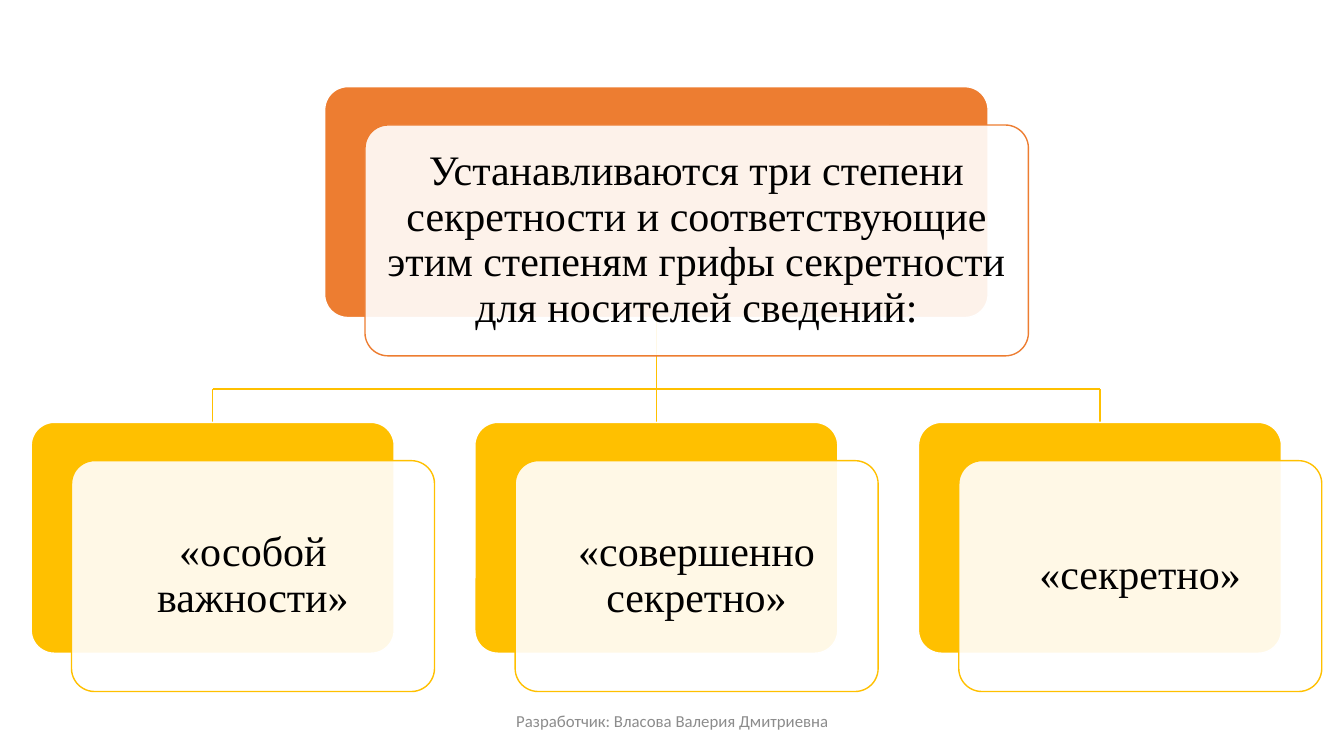
"""Build a slide with a tree diagram of the three degrees of secrecy."""
from pptx import Presentation
from pptx.dml.color import RGBColor
from pptx.enum.shapes import MSO_CONNECTOR, MSO_SHAPE
from pptx.enum.text import MSO_ANCHOR, MSO_AUTO_SIZE, PP_ALIGN
from pptx.oxml.ns import qn
from pptx.util import Inches, Pt
from lxml.etree import SubElement


def rgb(value):
    return RGBColor.from_string(value)


def write(sp, text, size, font, color, inset, spacing):
    tf = sp.text_frame
    tf.word_wrap = True
    tf.auto_size = MSO_AUTO_SIZE.NONE
    tf.vertical_anchor = MSO_ANCHOR.MIDDLE
    tf.margin_left = tf.margin_right = Inches(inset)
    tf.margin_top = tf.margin_bottom = Inches(inset)
    p = tf.paragraphs[0]
    p.alignment = PP_ALIGN.CENTER
    p.line_spacing = spacing
    r = p.add_run()
    r.text = text
    r.font.size = Pt(size)
    r.font.name = font
    r.font.color.rgb = rgb(color)


ORANGE, GOLD, WHITE, BLACK, GRAY = "ED7D31", "FFC000", "FFFFFF", "000000", "8C8C8C"
SERIF = "Times New Roman"
HEADING = ("Устанавливаются три степени секретности и соответствующие "
           "этим степеням грифы секретности для носителей сведений:")
DEGREES = ["«особой важности»", "«совершенно секретно»", "«секретно»"]
CARD_H, SHIFT_X, SHIFT_Y = 2.29, 0.4, 0.38
TOP_Y, ROW_Y, BUS_Y = 0.86, 4.19, 3.86
ROOT_W, DEGREE_W, STEP = 6.58, 3.6, 4.4
MIDDLE = 6.51
LEFT, RIGHT = MIDDLE - STEP, MIDDLE + STEP

prs = Presentation()
prs.slide_width, prs.slide_height = Inches(13.33), Inches(7.5)
s = prs.slides.add_slide(prs.slide_layouts[5])

branches = [
    (MIDDLE, TOP_Y + CARD_H, MIDDLE, ROW_Y),
    (LEFT, BUS_Y, RIGHT, BUS_Y),
    (LEFT, BUS_Y, LEFT, ROW_Y),
    (RIGHT, BUS_Y, RIGHT, ROW_Y),
]
for branch in branches:
    line = s.shapes.add_connector(MSO_CONNECTOR.STRAIGHT, *map(Inches, branch))
    line.line.color.rgb = rgb(GOLD)
    line.line.width = Pt(1)
    SubElement(line._element.spPr, qn("a:effectLst"))

cards = [(HEADING, MIDDLE, TOP_Y, ROOT_W, ORANGE)]
for i, degree in enumerate(DEGREES):
    cards.append((degree, LEFT + i * STEP, ROW_Y, DEGREE_W, GOLD))

for text, center, y, w, color in cards:
    x = center - w / 2
    layers = [(x, y, color, WHITE), (x + SHIFT_X, y + SHIFT_Y, WHITE, color)]
    for left, top, fill, outline in layers:
        sp = s.shapes.add_shape(MSO_SHAPE.ROUNDED_RECTANGLE, Inches(left),
                                Inches(top), Inches(w), Inches(CARD_H))
        sp.adjustments[0] = 0.1
        sp.shadow.inherit = False
        sp.fill.solid()
        sp.fill.fore_color.rgb = rgb(fill)
        sp.line.color.rgb = rgb(outline)
        sp.line.width = Pt(1)
    front_color = sp._element.spPr.find(qn("a:solidFill")).find(qn("a:srgbClr"))
    SubElement(front_color, qn("a:alpha"), val="90000")
    if text == HEADING:
        title = s.shapes.title
        title.left, title.top, title.width, title.height = (
            sp.left, sp.top, sp.width, sp.height)
        s.shapes._spTree.append(title._element)
        sp = title
    write(sp, text, 30, SERIF, BLACK, 0.19, 0.9)

footer = s.shapes.add_textbox(Inches(4.42), Inches(6.95), Inches(4.5), Inches(0.4))
write(footer, "Разработчик: Власова Валерия Дмитриевна", 12, "Calibri", GRAY, 0.05, 1.0)

prs.save("out.pptx")
